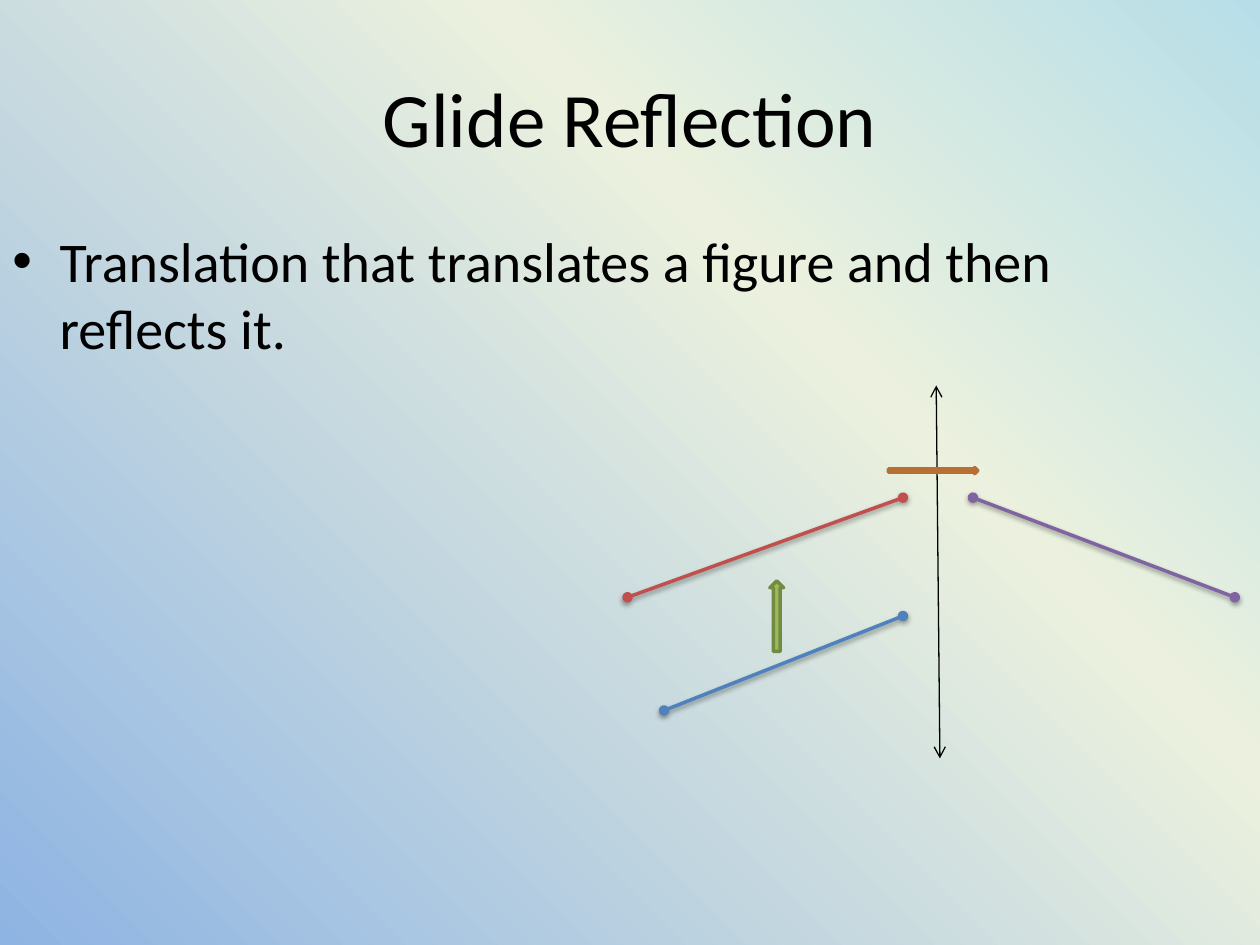
from lxml.etree import SubElement as Sub
from pptx import Presentation
from pptx.dml.color import RGBColor
from pptx.enum.shapes import MSO_CONNECTOR as Conn, MSO_SHAPE as Shape
from pptx.enum.text import MSO_ANCHOR as Anchor, PP_ALIGN as Align
from pptx.oxml.ns import qn
from pptx.util import Pt


def rgb(code):
    return RGBColor.from_string(code)


def add(node, tag, **attrs):
    return Sub(node, qn("a:" + tag), {k: str(v) for k, v in attrs.items()})


class Deck:
    font = "Calibri"
    ink = "000000"

    def __init__(self, wide, high):
        self.prs = Presentation()
        self.prs.slide_width, self.prs.slide_height = Pt(wide), Pt(high)
        self.slide = self.prs.slides.add_slide(self.prs.slide_layouts[6])

    def back(self, stops, angle):
        fill = self.slide.background.fill
        fill.gradient()
        fill.gradient_angle = angle
        group = self.slide.element.find(".//" + qn("a:gsLst"))
        for stop in list(group):
            group.remove(stop)
        for pos, code in stops:
            add(add(group, "gs", pos=pos * 1000), "srgbClr", val=code)

    def text(self, box, words, size, align=Align.LEFT, anchor=Anchor.TOP, indent=0):
        frame = self.slide.shapes.add_textbox(*map(Pt, box)).text_frame
        frame.word_wrap = True
        frame.vertical_anchor = anchor
        para = frame.paragraphs[0]
        para.alignment = align
        if indent:
            props = para._p.get_or_add_pPr()
            props.set("marL", str(Pt(indent)))
            props.set("indent", str(-Pt(indent)))
            add(props, "buFont", typeface="Arial")
            add(props, "buChar", char="•")
        run = para.add_run()
        run.text = words
        run.font.name, run.font.size = self.font, Pt(size)
        run.font.color.rgb = rgb(self.ink)

    def line(self, start, end, color, width, tip, shadow=False):
        link = self.slide.shapes.add_connector(Conn.STRAIGHT, *map(Pt, start + end))
        link.line.color.rgb = rgb(color)
        link.line.width = Pt(width)
        stroke = link.line._get_or_add_ln()
        for tag in ("headEnd", "tailEnd"):
            add(stroke, tag, type=tip)
        effect = add(link._element.spPr, "effectLst")
        if shadow:
            shade = add(effect, "outerShdw", blurRad=Pt(3.1), dist=Pt(1.6),
                        dir=90 * 60000, rotWithShape=0)
            add(add(shade, "srgbClr", val=self.ink), "alpha", val=38000)

    def arrow(self, kind, box, fill, edge):
        shape = self.slide.shapes.add_shape(kind, *map(Pt, box))
        shape.shadow.inherit = False
        shape.fill.solid()
        shape.fill.fore_color.rgb = rgb(fill)
        shape.line.color.rgb = rgb(edge)
        shape.line.width = Pt(2)


def main():
    deck = Deck(720, 540)
    deck.back([(0, "8EB4E3"), (65, "EBF1DE"), (100, "B7DEE8")], 45)

    # Title and definition
    deck.text((36, 21.6, 648, 90), "Glide Reflection", 44, Align.CENTER, Anchor.MIDDLE)
    deck.text((0, 126, 648, 356.4),
              "Translation that translates a figure and then reflects it.", 32, indent=27)

    # Figure, its translation and its reflection
    for start, end, color in [
        ((379.5, 406), (516, 352), "4F81BD"),
        ((358.6, 341.3), (516, 284.4), "C0504D"),
        ((556, 284.4), (705.6, 341.3), "8064A2"),
    ]:
        deck.line(start, end, color, 2, "oval", shadow=True)

    # Mirror line
    deck.line((535, 220.3), (537.1, 433.4), deck.ink, 0.75, "arrow")

    # Direction of each move
    deck.arrow(Shape.UP_ARROW, (439.9, 331.9, 7.9, 40.3), "9BBB59", "738A42")
    deck.arrow(Shape.RIGHT_ARROW, (507.6, 267.1, 51.1, 3.6), "F79646", "B76F34")

    deck.prs.save("out.pptx")


if __name__ == "__main__":
    main()
